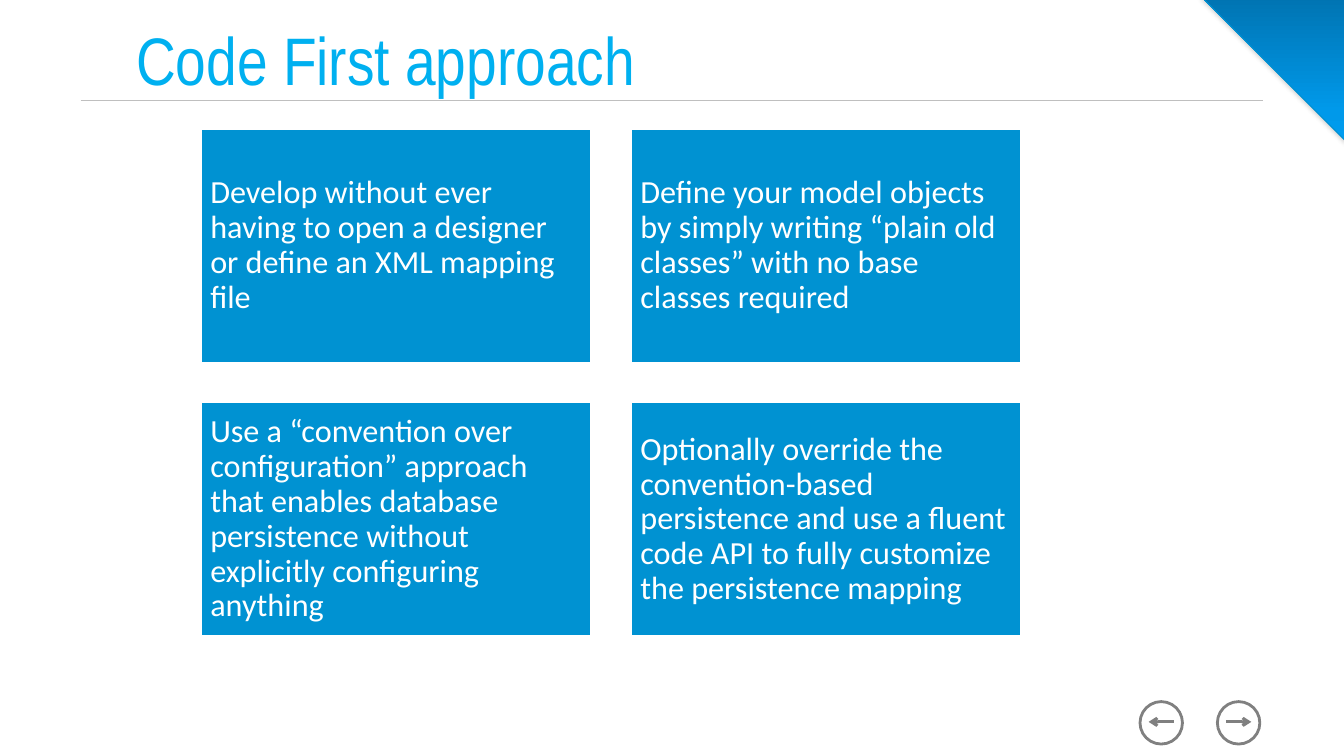
from copy import deepcopy
from dataclasses import dataclass

from lxml import etree
from pptx import Presentation
from pptx.dml.color import RGBColor
from pptx.enum.shapes import MSO_CONNECTOR, MSO_SHAPE
from pptx.enum.text import MSO_ANCHOR, PP_ALIGN
from pptx.oxml.ns import qn
from pptx.util import Cm, Pt

STRAIGHT = MSO_CONNECTOR.STRAIGHT
RECTANGLE, OVAL, TRIANGLE = MSO_SHAPE.RECTANGLE, MSO_SHAPE.OVAL, MSO_SHAPE.RIGHT_TRIANGLE
MIDDLE = MSO_ANCHOR.MIDDLE
LEFT = PP_ALIGN.LEFT
TITLE_ONLY = 5


@dataclass(frozen=True)
class Theme:
    title: str = "00B0F0"
    card: str = "0092D2"
    white: str = "FFFFFF"
    rule: str = "BFBFBF"
    navigation: str = "808080"
    shadow: str = "808080"
    corner_line: str = "0091D2"
    corner_stops: tuple = ((0, "009CF0"), (20, "0099EA"), (100, "0074B2"))
    title_font: str = "Arial Narrow"
    card_font: str = "Calibri"
    title_size: float = 48
    card_size: float = 23
    thin: float = 0.75
    thick: float = 2


@dataclass(frozen=True)
class Rule:
    y: float
    color: str


@dataclass(frozen=True)
class NavigationButton:
    left: float
    direction: int


THEME = Theme()
RULES = (Rule(2.54, THEME.rule), Rule(2.57, THEME.white))
BUTTONS = (NavigationButton(28.73, -1), NavigationButton(30.68, 1))
BUTTON_TOP, BUTTON_SIZE, ARROW_Y, ARROW_REACH = 17.68, 1.07, 18.19, 0.32
CARDS = (
    "Develop without ever having to open a designer or define an XML mapping file",
    "Define your model objects by simply writing “plain old classes” with no base classes required",
    "Use a “convention over configuration” approach that enables database persistence "
    "without explicitly configuring anything",
    "Optionally override the convention-based persistence and use a fluent code API "
    "to fully customize the persistence mapping",
)
CARD_COLUMNS, CARD_LEFT, CARD_TOP = 2, 5.05, 3.23
CARD_WIDTH, CARD_HEIGHT, CARD_GAP = 9.86, 5.92, 0.98


def write(shape, text: str, *, font: str, size: float, color: str, spacing: float = 1.0) -> None:
    frame = shape.text_frame
    frame.word_wrap = True
    frame.vertical_anchor = MIDDLE
    frame.margin_left = frame.margin_right = Cm(0.25)
    frame.margin_top = frame.margin_bottom = Cm(0.25 if spacing < 1 else 0.13)
    paragraph = frame.paragraphs[0]
    paragraph.alignment = LEFT
    paragraph.line_spacing = spacing
    run = paragraph.add_run()
    run.text = text
    run.font.name = font
    run.font.size = Pt(size)
    run.font.color.rgb = RGBColor.from_string(color)


def outline(line, color: str, width: float) -> None:
    line.color.rgb = RGBColor.from_string(color)
    line.width = Pt(width)


def add_shape(slide, kind, left: float, top: float, width: float, height: float,
              line: str, weight: float):
    shape = slide.shapes.add_shape(kind, Cm(left), Cm(top), Cm(width), Cm(height))
    shape.shadow.inherit = False
    outline(shape.line, line, weight)
    return shape


def add_line(slide, start: float, end: float, y: float, color: str, weight: float,
             arrow: bool = False) -> None:
    connector = slide.shapes.add_connector(STRAIGHT, Cm(start), Cm(y), Cm(end), Cm(y))
    outline(connector.line, color, weight)
    properties = connector._element.spPr
    if arrow:
        etree.SubElement(properties.find(qn("a:ln")), qn("a:tailEnd"), type="arrow")
    etree.SubElement(properties, qn("a:effectLst"))


def add_corner(slide) -> None:
    corner = add_shape(slide, TRIANGLE, 30.28, -0.08, 3.61, 3.61, THEME.corner_line, THEME.thin)
    corner.rotation = 180
    corner.fill.gradient()
    corner.fill.gradient_angle = 270
    properties = corner._element.spPr
    stop_list = properties.find(qn("a:gradFill")).find(qn("a:gsLst"))
    stop_list.insert(1, deepcopy(stop_list[0]))
    for stop, (position, color) in zip(corner.fill.gradient_stops, THEME.corner_stops):
        stop.position = position / 100
        stop.color.rgb = RGBColor.from_string(color)
    shadow = etree.SubElement(
        properties.find(qn("a:effectLst")), qn("a:outerShdw"),
        blurRad=str(Pt(3.1)), dist=str(Pt(1.8)), dir="5400000", rotWithShape="0")
    shade = etree.SubElement(shadow, qn("a:srgbClr"), val=THEME.shadow)
    etree.SubElement(shade, qn("a:alpha"), val="35000")


def add_button(slide, button: NavigationButton) -> None:
    ring = add_shape(slide, OVAL, button.left, BUTTON_TOP, BUTTON_SIZE, BUTTON_SIZE,
                     THEME.navigation, THEME.thick)
    ring.fill.background()
    center = button.left + BUTTON_SIZE / 2
    reach = button.direction * ARROW_REACH
    add_line(slide, center - reach, center + reach, ARROW_Y,
             THEME.navigation, THEME.thick, arrow=True)


def add_card(slide, index: int, text: str) -> None:
    row, column = divmod(index, CARD_COLUMNS)
    card = add_shape(slide, RECTANGLE,
                     CARD_LEFT + column * (CARD_WIDTH + CARD_GAP),
                     CARD_TOP + row * (CARD_HEIGHT + CARD_GAP),
                     CARD_WIDTH, CARD_HEIGHT, THEME.white, THEME.thick)
    card.fill.solid()
    card.fill.fore_color.rgb = RGBColor.from_string(THEME.card)
    write(card, text, font=THEME.card_font, size=THEME.card_size,
          color=THEME.white, spacing=0.9)


def main() -> None:
    deck = Presentation()
    deck.slide_width, deck.slide_height = Cm(33.87), Cm(19.05)
    slide = deck.slides.add_slide(deck.slide_layouts[TITLE_ONLY])
    for rule in RULES:
        add_line(slide, 2.03, 31.83, rule.y, rule.color, THEME.thin)
    for button in BUTTONS:
        add_button(slide, button)
    add_corner(slide)
    heading = slide.shapes.title
    heading.left, heading.top, heading.width, heading.height = Cm(3.18), Cm(0.46), Cm(27.43), Cm(2.01)
    write(heading, "Code First approach", font=THEME.title_font,
          size=THEME.title_size, color=THEME.title)
    for index, text in enumerate(CARDS):
        add_card(slide, index, text)
    deck.save("out.pptx")


if __name__ == "__main__":
    main()
